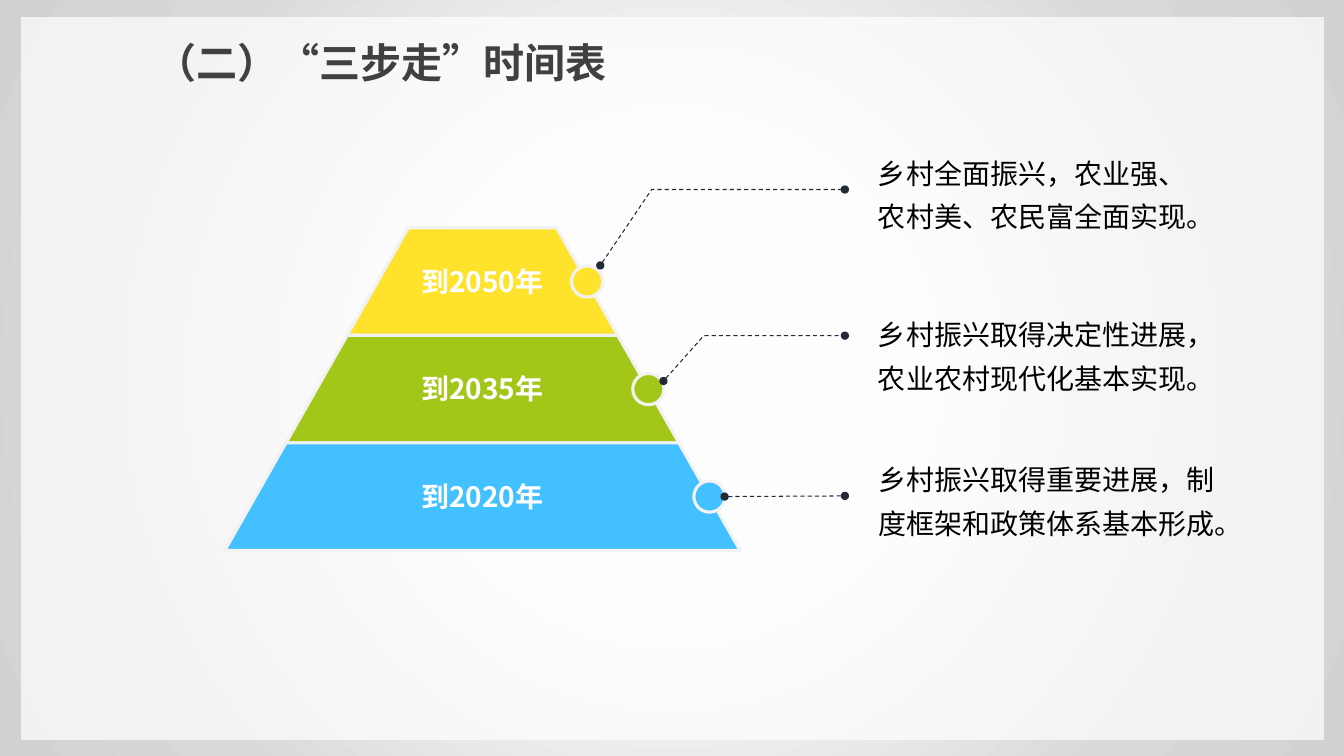
from dataclasses import dataclass

from lxml import etree
from pptx import Presentation
from pptx.dml.color import RGBColor
from pptx.enum.dml import MSO_LINE
from pptx.enum.shapes import MSO_CONNECTOR, MSO_SHAPE
from pptx.enum.text import MSO_ANCHOR, MSO_AUTO_SIZE, PP_ALIGN
from pptx.oxml import parse_xml
from pptx.oxml.ns import nsdecls, qn
from pptx.util import Inches, Pt


@dataclass(frozen=True)
class Theme:
    title_font: str = "Arial"
    font: str = "Noto Sans CJK SC"
    title_size: float = 29.3
    text_size: float = 20
    title_color: str = "404040"
    text_color: str = "000000"
    white: str = "FFFFFF"
    border: str = "F2F2F2"
    leader: str = "222A35"
    backdrop: tuple = ((30, "FBFBFB"), (74, "D9D9D9"), (100, "D1D1D1"))


@dataclass(frozen=True)
class Box:
    left: float
    top: float
    width: float
    height: float

    def inches(self):
        return [Inches(v) for v in (self.left, self.top, self.width, self.height)]


@dataclass(frozen=True)
class Step:
    label: str
    label_width: float
    color: str
    text: str
    callout: Box
    leader_start: tuple  # offset from the centre of the node
    leader_end: float  # distance below the top of the callout
    bend: float = 0  # horizontal distance from leader start to its bend


THEME = Theme()
SLIDE = Box(0, 0, 13.33, 7.5)
PANEL = Box(0.21, 0.17, 12.92, 7.17)
TITLE = Box(1.44, 0.32, 4.73, 0.59)
PYRAMID = Box(2.23, 2.26, 5.11, 3.2)
TOP_SHARE = 0.288  # width of the top edge as a share of the base
NODE_SIZE = 0.31
LEADER_GAP = 0.23

STEPS = [
    Step("到2050年", 2.04, "FFE22C", "乡村全面振兴，农业强、农村美、农民富全面实现。",
         Box(8.61, 1.4, 3.26, 0.93), (0.13, -0.16), 0.48, 0.51),
    Step("到2035年", 2.39, "A3C718", "乡村振兴取得决定性进展，农业农村现代化基本实现。",
         Box(8.61, 3, 3.66, 0.98), (0.15, -0.08), 0.33, 0.4),
    Step("到2020年", 3.13, "42C0FF", "乡村振兴取得重要进展，制度框架和政策体系基本形成。",
         Box(8.61, 4.44, 3.79, 0.98), (0.15, 0), 0.48),
]


def rgb(value):
    return RGBColor.from_string(value)


def write_text(shape, text, color, size=THEME.text_size, font=THEME.font, bold=False,
               align=PP_ALIGN.LEFT, spacing=None, wrap=True, insets=(0.1, 0.05)):
    frame = shape.text_frame
    frame.text = text
    frame.word_wrap = wrap
    frame.auto_size = MSO_AUTO_SIZE.SHAPE_TO_FIT_TEXT
    frame.vertical_anchor = MSO_ANCHOR.TOP
    frame.margin_left = frame.margin_right = Inches(insets[0])
    frame.margin_top = frame.margin_bottom = Inches(insets[1])
    paragraph = frame.paragraphs[0]
    paragraph.alignment = align
    paragraph.line_spacing = spacing
    run = paragraph.runs[0]
    run.font.size, run.font.bold, run.font.name = Pt(size), bold, font
    run.font.color.rgb = rgb(color)
    east_asian = etree.SubElement(run.font._element, qn("a:ea"))
    east_asian.set("typeface", THEME.font)


def fill_with_border(shape, color):
    shape.shadow.inherit = False
    shape.fill.solid()
    shape.fill.fore_color.rgb = rgb(color)
    shape.line.color.rgb = rgb(THEME.border)
    shape.line.width = Pt(2.25)


def draw_outline(slide, points, close):
    points = [(Inches(x), Inches(y)) for x, y in points]
    builder = slide.shapes.build_freeform(*points[0], scale=1.0)
    builder.add_line_segments(points[1:], close=close)
    return builder.convert_to_shape()


def add_backdrop(slide, slide_box, panel_box):
    tree = slide.shapes._spTree
    # Radial grey gradient behind a translucent white panel
    stops = "".join(f'<a:gs pos="{position * 1000}"><a:srgbClr val="{color}"/></a:gs>'
                    for position, color in THEME.backdrop)
    gradient = (f'<a:gradFill {nsdecls("a")} rotWithShape="1"><a:gsLst>{stops}</a:gsLst>'
                '<a:path path="circle"><a:fillToRect l="50000" t="50000" r="50000" b="50000"/>'
                '</a:path></a:gradFill>')
    panel_fill = (f'<a:solidFill {nsdecls("a")}><a:srgbClr val="{THEME.white}">'
                  '<a:alpha val="70000"/></a:srgbClr></a:solidFill>')
    for index, (box, fill) in enumerate([(slide_box, gradient), (panel_box, panel_fill)]):
        shape = slide.shapes.add_shape(MSO_SHAPE.RECTANGLE, *box.inches())
        shape.shadow.inherit = False
        shape.line.fill.background()
        shape._element.spPr.find(qn("a:prstGeom")).addnext(parse_xml(fill))
        tree.insert(2 + index, shape._element)  # behind the title


def add_title(slide, box, text):
    title = slide.shapes.title
    title.left, title.top, title.width, title.height = box.inches()
    write_text(title, text, THEME.title_color, THEME.title_size, THEME.title_font,
               bold=True, wrap=False)


def add_pyramid(slide, box, steps):
    """Draw the tiers with labels and nodes; return the centres of the nodes."""
    center = box.left + box.width / 2
    tier_height = box.height / len(steps)

    def half_width(level):
        share = TOP_SHARE + (1 - TOP_SHARE) * level / len(steps)
        return box.width * share / 2

    nodes = []
    for level, step in enumerate(steps):
        # Tier
        top = box.top + level * tier_height
        bottom = top + tier_height
        upper, lower = half_width(level), half_width(level + 1)
        tier = draw_outline(slide, [(center - upper, top), (center - lower, bottom),
                                    (center + lower, bottom), (center + upper, top)], True)
        fill_with_border(tier, step.color)
        # Label
        middle = top + tier_height / 2
        label_box = Box(center - step.label_width / 2, middle - 0.2, step.label_width, 0.4)
        label = slide.shapes.add_textbox(*label_box.inches())
        write_text(label, step.label, THEME.white, bold=True, align=PP_ALIGN.CENTER,
                   insets=(0.07, 0.03))
        nodes.append((center + half_width(level + 0.5), middle))
    # Nodes on the right edge, above all tiers
    for (x, y), step in zip(nodes, steps):
        node_box = Box(x - NODE_SIZE / 2, y - NODE_SIZE / 2, NODE_SIZE, NODE_SIZE)
        fill_with_border(slide.shapes.add_shape(MSO_SHAPE.OVAL, *node_box.inches()), step.color)
    return nodes


def add_leader(slide, start, end, bend):
    if bend:
        leader = draw_outline(slide, [start, (start[0] + bend, end[1]), end], False)
        leader.fill.background()
    else:
        leader = slide.shapes.add_connector(
            MSO_CONNECTOR.STRAIGHT, *[Inches(v) for v in (*start, *end)])
    leader.line.color.rgb = rgb(THEME.leader)
    leader.line.width = Pt(0.75)
    leader.line.dash_style = MSO_LINE.DASH
    properties = leader._element.spPr
    for tag in ("a:headEnd", "a:tailEnd"):
        etree.SubElement(properties.find(qn("a:ln")), qn(tag)).set("type", "oval")
    etree.SubElement(properties, qn("a:effectLst"))


def add_callout(slide, box, step, node):
    start = (node[0] + step.leader_start[0], node[1] + step.leader_start[1])
    end = (box.left - LEADER_GAP, box.top + step.leader_end)
    add_leader(slide, start, end, step.bend)
    text_box = slide.shapes.add_textbox(*box.inches())
    write_text(text_box, step.text, THEME.text_color, spacing=1.3)


def main():
    presentation = Presentation()
    presentation.slide_width = Inches(SLIDE.width)
    presentation.slide_height = Inches(SLIDE.height)
    slide = presentation.slides.add_slide(presentation.slide_layouts[5])
    add_backdrop(slide, SLIDE, PANEL)
    add_title(slide, TITLE, "（二）“三步走”时间表")
    nodes = add_pyramid(slide, PYRAMID, STEPS)
    for step, node in zip(STEPS, nodes):
        add_callout(slide, step.callout, step, node)
    presentation.save("out.pptx")


if __name__ == "__main__":
    main()
